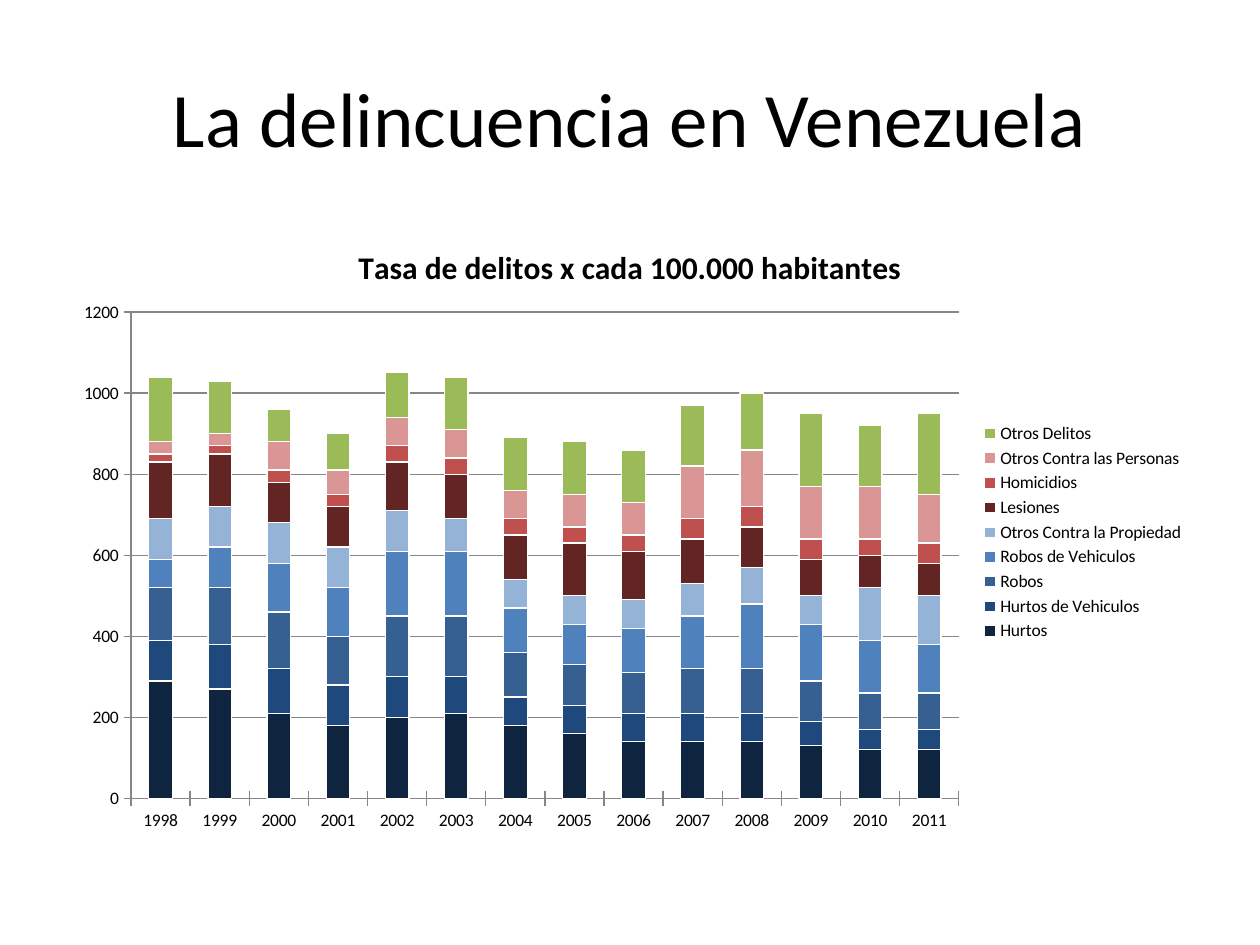
from dataclasses import dataclass

from lxml import etree
from pptx import Presentation
from pptx import util as u
from pptx.chart.data import CategoryChartData
from pptx.dml.color import RGBColor
from pptx.enum import chart as charts, text


@dataclass(frozen=True)
class Theme:
    """Colours and type sizes of the slide."""
    font: str = "Calibri"
    ink: str = "000000"
    grid: str = "868686"
    edge: str = "FFFFFF"
    title: int = 44
    chart_title: int = 18
    label: int = 10
    line: float = 0.75


THEME = Theme()
WIDTH, HEIGHT = u.Inches(10), u.Inches(7.5)
TITLE_BOX = (0.05, 0.04, 0.9, 1 / 6)
CHART_BOX = (0.05, 0.2333, 0.9, 0.66)
PLOT_AREA = {"x": 0.06, "y": 0.147, "w": 0.73, "h": 0.78}
YEARS = range(1998, 2012)
CRIMES = [
    ("Hurtos", "0F243E",
     [290, 270, 210, 180, 200, 210, 180, 160, 140, 140, 140, 130, 120, 120]),
    ("Hurtos de Vehiculos", "1F497D",
     [100, 110, 110, 100, 100, 90, 70, 70, 70, 70, 70, 60, 50, 50]),
    ("Robos", "376092",
     [130, 140, 140, 120, 150, 150, 110, 100, 100, 110, 110, 100, 90, 90]),
    ("Robos de Vehiculos", "4F81BD",
     [70, 100, 120, 120, 160, 160, 110, 100, 110, 130, 160, 140, 130, 120]),
    ("Otros Contra la Propiedad", "95B3D7",
     [100, 100, 100, 100, 100, 80, 70, 70, 70, 80, 90, 70, 130, 120]),
    ("Lesiones", "632523",
     [140, 130, 100, 100, 120, 110, 110, 130, 120, 110, 100, 90, 80, 80]),
    ("Homicidios", "C0504D",
     [20, 20, 30, 30, 40, 40, 40, 40, 40, 50, 50, 50, 40, 50]),
    ("Otros Contra las Personas", "D99694",
     [30, 30, 70, 60, 70, 70, 70, 80, 80, 130, 140, 130, 130, 120]),
    ("Otros Delitos", "9BBB59",
     [160, 130, 80, 90, 110, 130, 130, 130, 130, 150, 140, 180, 150, 200]),
]


def place(box):
    """Turn shares of the slide into left, top, width and height."""
    return [u.Emu(round(share * side))
            for share, side in zip(box, (WIDTH, HEIGHT) * 2)]


def style_font(font, size, bold=False):
    """Give a font the theme's typeface and ink."""
    font.name, font.size, font.bold = THEME.font, u.Pt(size), bold
    font.color.rgb = RGBColor.from_string(THEME.ink)


def style_line(line, colour):
    """Give a line the theme's weight and a colour."""
    line.color.rgb = RGBColor.from_string(colour)
    line.width = u.Pt(THEME.line)


def add_title(slide, box, wording):
    """Place and format the title placeholder."""
    title = slide.shapes.title
    title.left, title.top, title.width, title.height = place(box)
    frame = title.text_frame
    frame.text = wording
    frame.vertical_anchor = text.MSO_ANCHOR.MIDDLE
    paragraph = frame.paragraphs[0]
    paragraph.alignment = text.PP_ALIGN.CENTER
    style_font(paragraph.font, THEME.title)


def set_plot_area(chart, shares):
    """Fix the inner plot area at shares of the chart."""
    plot_area = chart.plots[0]._element.getparent()
    namespace = etree.QName(plot_area).namespace
    for old in plot_area.findall(f"{{{namespace}}}layout"):
        plot_area.remove(old)
    layout = etree.Element(f"{{{namespace}}}layout")
    plot_area.insert(0, layout)
    manual = etree.SubElement(layout, f"{{{namespace}}}manualLayout")
    settings = {"layoutTarget": "inner", "xMode": "edge", "yMode": "edge", **shares}
    for name, value in settings.items():
        etree.SubElement(manual, f"{{{namespace}}}{name}", val=str(value))


def add_crime_chart(slide, box, wording):
    """Add the stacked columns of crime rates by year."""
    data = CategoryChartData(number_format="General")
    data.categories = YEARS
    for name, _, rates in CRIMES:
        data.add_series(name, rates)
    frame = slide.shapes.add_chart(
        charts.XL_CHART_TYPE.COLUMN_STACKED, *place(box), data)
    chart = frame.chart
    style_font(chart.font, THEME.label)

    chart.has_title = True
    chart.chart_title.text_frame.text = wording
    chart.chart_title.include_in_layout = False
    heading = chart.chart_title.text_frame.paragraphs[0]
    style_font(heading.font, THEME.chart_title, bold=True)

    chart.has_legend = True
    chart.legend.position = charts.XL_LEGEND_POSITION.RIGHT
    chart.legend.include_in_layout = False

    plot = chart.plots[0]
    plot.gap_width, plot.overlap, plot.vary_by_categories = 150, 100, False
    for series, (_, colour, _) in zip(plot.series, CRIMES):
        series.format.fill.solid()
        series.format.fill.fore_color.rgb = RGBColor.from_string(colour)
        style_line(series.format.line, THEME.edge)

    for axis in (chart.category_axis, chart.value_axis):
        axis.major_tick_mark = charts.XL_TICK_MARK.CROSS
        axis.minor_tick_mark = charts.XL_TICK_MARK.NONE
        style_line(axis.format.line, THEME.grid)
    rates_axis = chart.value_axis
    rates_axis.minimum_scale, rates_axis.maximum_scale = 0, 1200
    rates_axis.major_unit = 200
    rates_axis.has_major_gridlines = True
    style_line(rates_axis.major_gridlines.format.line, THEME.grid)
    set_plot_area(chart, PLOT_AREA)


def main():
    """Build and save the presentation."""
    presentation = Presentation()
    presentation.slide_width, presentation.slide_height = WIDTH, HEIGHT
    slide = presentation.slides.add_slide(presentation.slide_layouts[5])
    add_title(slide, TITLE_BOX, "La delincuencia en Venezuela")
    add_crime_chart(slide, CHART_BOX, "Tasa de delitos x cada 100.000 habitantes")
    presentation.save("out.pptx")


if __name__ == "__main__":
    main()
